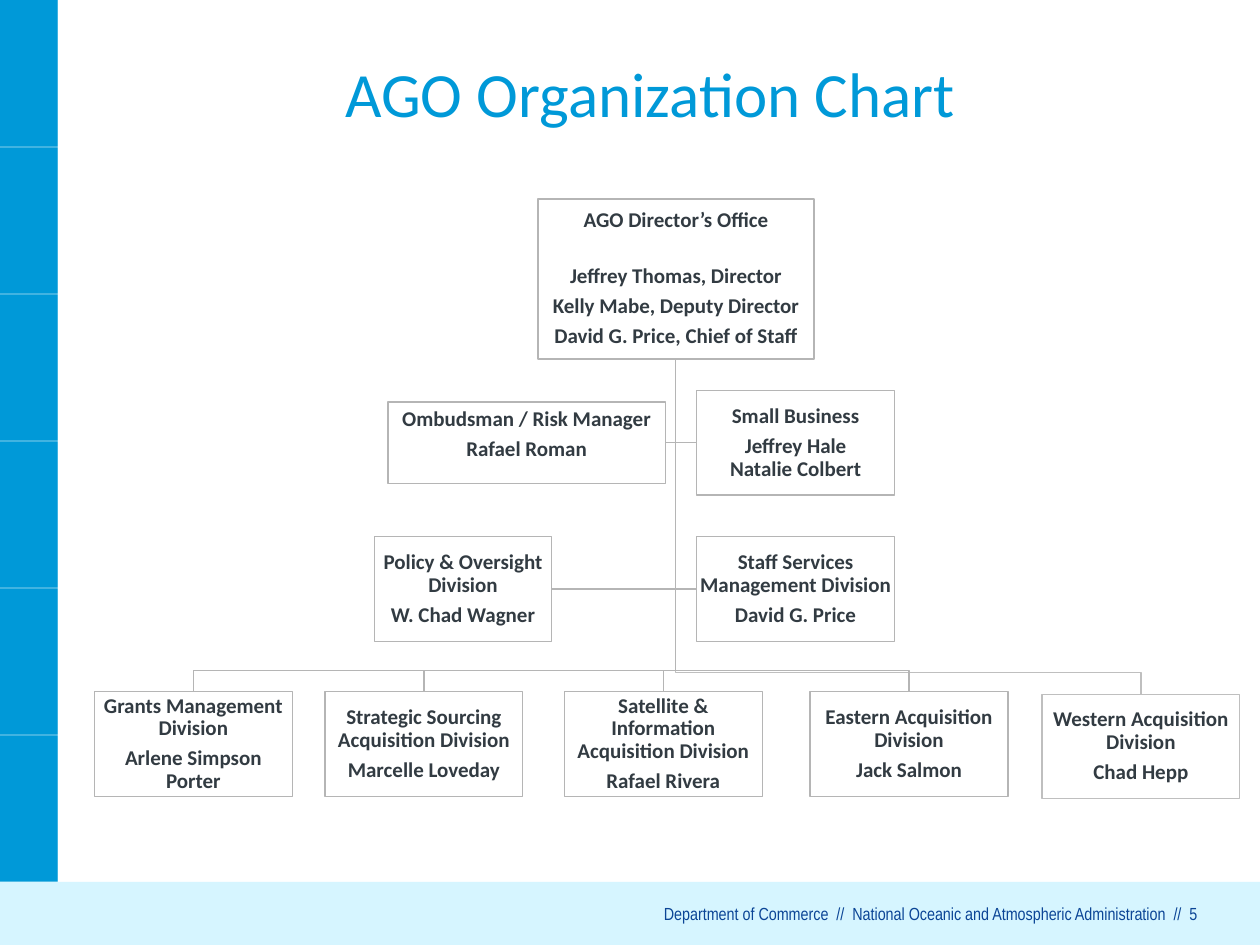
from dataclasses import dataclass

from lxml import etree
from pptx import Presentation
from pptx.dml.color import RGBColor
from pptx.enum.shapes import MSO_CONNECTOR, MSO_SHAPE
from pptx.enum.text import MSO_ANCHOR, PP_ALIGN
from pptx.oxml.ns import qn
from pptx.util import Inches, Pt

RECTANGLE = MSO_SHAPE.RECTANGLE
STRAIGHT = MSO_CONNECTOR.STRAIGHT
CENTER, RIGHT = PP_ALIGN.CENTER, PP_ALIGN.RIGHT
TOP, MIDDLE = MSO_ANCHOR.TOP, MSO_ANCHOR.MIDDLE


@dataclass(frozen=True)
class Theme:
    blue: str = "0099D8"
    pale_blue: str = "D6F5FF"
    navy: str = "0B4596"
    ink: str = "323B42"
    gray: str = "B5B5B5"
    light_gray: str = "BFBFBF"
    white: str = "FFFFFF"
    body_font: str = "Calibri"
    footer_font: str = "Arial Narrow"
    title_size: float = 36
    box_size: float = 12
    footer_size: float = 10
    line_width: float = 0.75
    paragraph_gap: float = 4.2
    heading_gap: float = 19


THEME = Theme()
SIDEBAR_WIDTH = 0.46
SIDEBAR_STEP = 7 / 6
TRUNK_X, TRUNK_TOP = 5.36, 2.86
DIVISION_WIDTH, DIVISION_HEIGHT = 1.57, 0.83
DIVISION_TOP, BUS_Y = 5.49, 5.32
WESTERN_DROP = 0.02

DIRECTOR = ["AGO Director’s Office", "Jeffrey Thomas, Director",
            "Kelly Mabe, Deputy Director", "David G. Price, Chief of Staff"]
OMBUDSMAN = ["Ombudsman / Risk Manager", "Rafael Roman"]

STAFF = [
    (5.53, 3.1, DIVISION_WIDTH, ["Small Business", "Jeffrey Hale\nNatalie Colbert"]),
    (2.97, 4.26, 1.41, ["Policy & Oversight Division", "W. Chad Wagner"]),
    (5.53, 4.26, DIVISION_WIDTH,
     ["Staff Services Management Division", "David G. Price"]),
]

DIVISIONS = [
    (0.75, ["Grants Management Division", "Arlene Simpson Porter"]),
    (2.58, ["Strategic Sourcing Acquisition Division", "Marcelle Loveday"]),
    (4.48, ["Satellite & Information Acquisition Division", "Rafael Rivera"]),
    (6.43, ["Eastern Acquisition Division", "Jack Salmon"]),
]
WESTERN = (8.27, ["Western Acquisition Division", "Chad Hepp"])


def color(value):
    return RGBColor.from_string(value)


def set_line(shape, value):
    shape.line.color.rgb = color(value)
    shape.line.width = Pt(THEME.line_width)


def add_panel(page, left, top, width, height, fill=None, line=None):
    panel = page.shapes.add_shape(
        RECTANGLE, Inches(left), Inches(top), Inches(width), Inches(height))
    panel.shadow.inherit = False
    if fill:
        panel.fill.solid()
        panel.fill.fore_color.rgb = color(fill)
    else:
        panel.fill.background()
    if line:
        set_line(panel, line)
    else:
        panel.line.fill.background()
    return panel


def write_text(box, paragraphs, size, ink, font=THEME.body_font, bold=False,
               align=CENTER, anchor=MIDDLE, inset=0, bottom=None,
               spacing=1.0, gaps=()):
    frame = box.text_frame
    frame.word_wrap = True
    frame.vertical_anchor = anchor
    frame.margin_left = frame.margin_right = frame.margin_top = Inches(inset)
    frame.margin_bottom = Inches(inset if bottom is None else bottom)
    for index, text in enumerate(paragraphs):
        para = frame.add_paragraph() if index else frame.paragraphs[0]
        para.alignment = align
        para.line_spacing = spacing
        if index:
            para.space_before = Pt(gaps[index - 1])
        for row, line in enumerate(text.split("\n")):
            if row:
                para.add_line_break()
            span = para.add_run()
            span.text = line
            span.font.name = font
            span.font.size = Pt(size)
            span.font.bold = bold
            span.font.color.rgb = color(ink)


def add_label(page, text, left, top, width, height, **style):
    box = page.shapes.add_textbox(
        Inches(left), Inches(top), Inches(width), Inches(height))
    write_text(box, [text], **style)


def add_unit(page, left, top, width, height, paragraphs, line=THEME.gray,
             first_gap=THEME.paragraph_gap, bottom=0.01):
    box = add_panel(page, left, top, width, height, line=line)
    gaps = [first_gap] + [THEME.paragraph_gap] * (len(paragraphs) - 2)
    write_text(box, paragraphs, THEME.box_size, THEME.ink, bold=True,
               inset=0.01, bottom=bottom, spacing=0.9, gaps=gaps)


def add_route(page, *points, line=THEME.gray):
    builder = page.shapes.build_freeform(Inches(TRUNK_X), Inches(TRUNK_TOP))
    builder.add_line_segments(
        [(Inches(x), Inches(y)) for x, y in points], close=False)
    route = builder.convert_to_shape()
    route.shadow.inherit = False
    route.fill.background()
    set_line(route, line)


def add_rule(page, start, end):
    rule = page.shapes.add_connector(
        STRAIGHT, *(Inches(value) for value in (*start, *end)))
    set_line(rule, THEME.white)
    properties = rule._element.spPr
    etree.SubElement(properties, qn("a:effectLst"))
    paint = properties.find(".//" + qn("a:srgbClr"))
    etree.SubElement(paint, qn("a:alpha"), val="40000")


def add_frame(page):
    add_panel(page, 0, 0, SIDEBAR_WIDTH, 7.5, fill=THEME.blue)
    for step in range(1, 7):
        height = step * SIDEBAR_STEP
        add_rule(page, (0, height), (SIDEBAR_WIDTH, height))
    add_rule(page, (SIDEBAR_WIDTH, 0), (SIDEBAR_WIDTH, 7.5))
    add_panel(page, 0, 7, 10, 0.5, fill=THEME.pale_blue)
    add_label(page, "Department of Commerce  //  National Oceanic and "
              "Atmospheric Administration  //  5", 1.58, 7.17, 7.92, 0.17,
              size=THEME.footer_size, ink=THEME.navy, font=THEME.footer_font,
              align=RIGHT, anchor=TOP)
    add_label(page, "AGO Organization Chart", 0.82, 0.3, 8.68, 0.87,
              size=THEME.title_size, ink=THEME.blue)


def add_staff(page):
    add_route(page, (TRUNK_X, 3.51), (5.28, 3.51))
    add_unit(page, 3.08, 3.19, 2.2, 0.65, OMBUDSMAN, bottom=0.14)
    for left, top, width, paragraphs in STAFF:
        middle = top + DIVISION_HEIGHT / 2
        edge = left if left > TRUNK_X else left + width
        add_route(page, (TRUNK_X, middle), (edge, middle))
        add_unit(page, left, top, width, DIVISION_HEIGHT, paragraphs)


def add_division(page, left, paragraphs, drop=0, line=THEME.gray):
    center = left + DIVISION_WIDTH / 2
    top, bus = DIVISION_TOP + drop, BUS_Y + drop
    add_route(page, (TRUNK_X, bus), (center, bus), (center, top), line=line)
    add_unit(page, left, top, DIVISION_WIDTH, DIVISION_HEIGHT, paragraphs, line)


def main():
    deck = Presentation()
    deck.slide_width, deck.slide_height = Inches(10), Inches(7.5)
    page = deck.slides.add_slide(deck.slide_layouts[6])
    add_frame(page)
    add_division(page, *WESTERN, drop=WESTERN_DROP, line=THEME.light_gray)
    for left, paragraphs in DIVISIONS:
        add_division(page, left, paragraphs)
    add_staff(page)
    add_unit(page, 4.27, 1.58, 2.19, 1.27, DIRECTOR,
             first_gap=THEME.heading_gap)
    deck.save("out.pptx")


if __name__ == "__main__":
    main()
